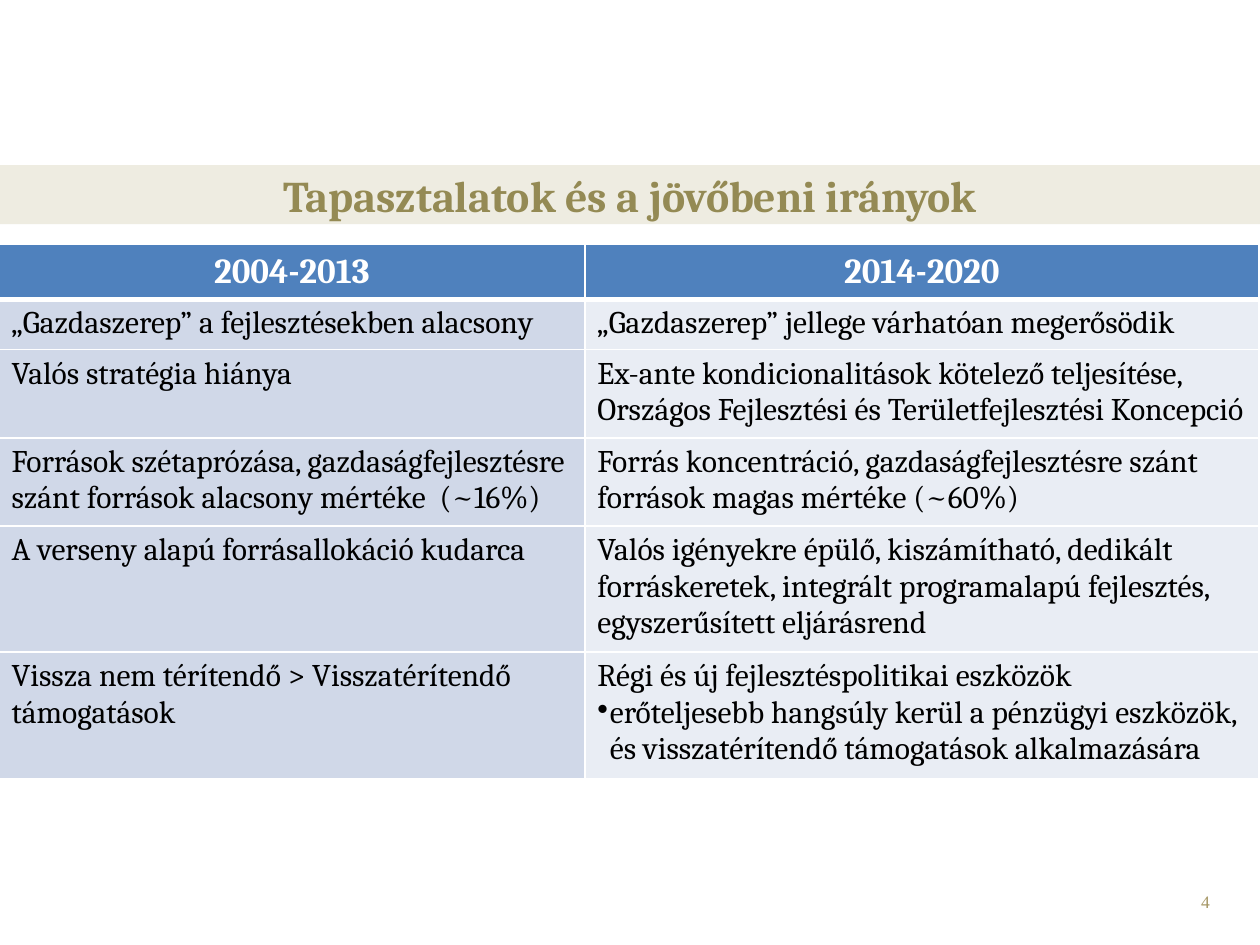
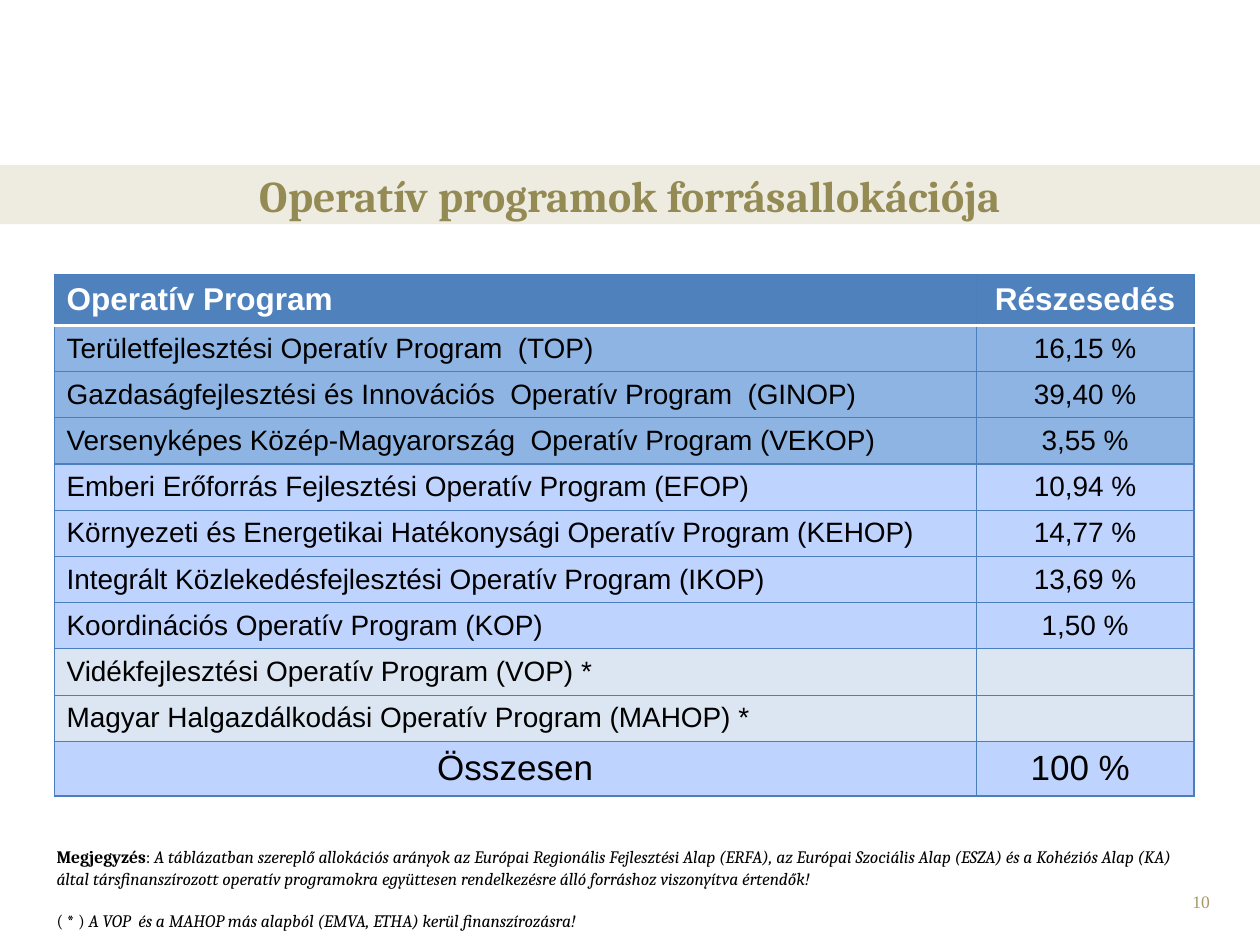
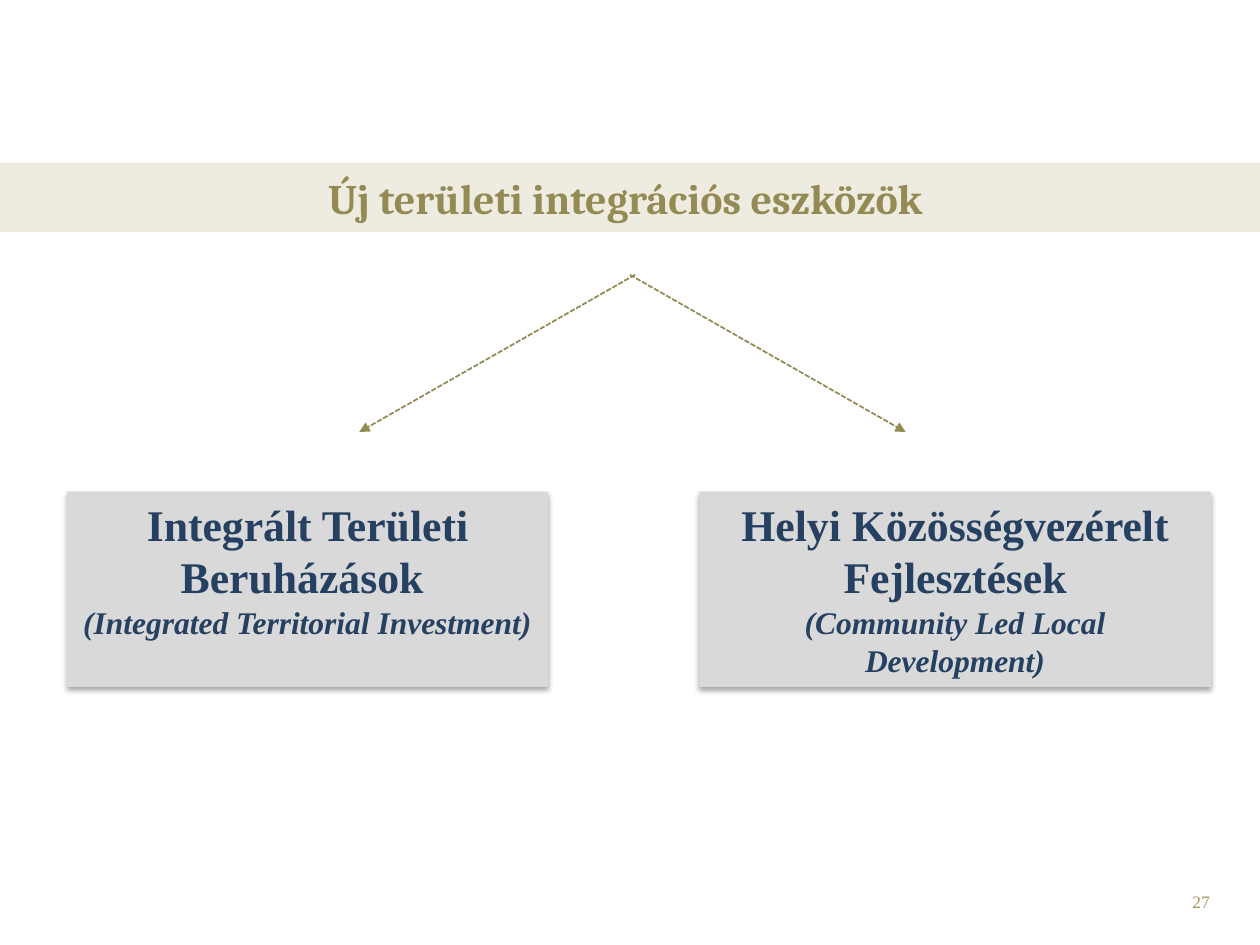
from dataclasses import dataclass

from lxml.etree import SubElement
from pptx import Presentation
from pptx.dml.color import RGBColor
from pptx.enum.dml import MSO_LINE
from pptx.enum.shapes import MSO_CONNECTOR, MSO_SHAPE
from pptx.enum.text import MSO_ANCHOR, PP_ALIGN
from pptx.oxml import parse_xml
from pptx.oxml.ns import nsdecls, qn
from pptx.util import Cm, Pt

COLORS = {
    "band": "EEECE1", "olive": "948A54", "number": "A69765", "white": "FFFFFF",
    "black": "000000", "header": "4F81BD", "past": "D0D8E8", "future": "E9EDF4",
    "grid": "4B7EBC", "economy": "8EB4E3", "sector": "BFD3FF", "rural": "DCE6F2",
    "card": "D9D9D9", "navy": "254061",
}
SERIF, TITLE_FONT, SANS = "Times New Roman", "Cambria", "Arial"
PAGE_WIDTH, PAGE_HEIGHT = 25.4, 19.05


@dataclass(frozen=True)
class Area:
    left: float
    top: float
    width: float
    height: float

    def lengths(self) -> tuple:
        return Cm(self.left), Cm(self.top), Cm(self.width), Cm(self.height)


@dataclass(frozen=True)
class TextStyle:
    font: str
    size: float
    color: str
    bold: bool = False
    italic: bool = False
    align: PP_ALIGN = PP_ALIGN.LEFT


@dataclass(frozen=True)
class Row:
    height: float
    texts: tuple
    fills: tuple
    styles: tuple


@dataclass(frozen=True)
class Grid:
    left: float
    top: float
    columns: tuple
    line_color: str
    line_width: float
    header_line: float
    anchor: MSO_ANCHOR


@dataclass(frozen=True)
class Card:
    area: Area
    name: str
    english: str


BAND = Area(0, 3.33, PAGE_WIDTH, 1.19)
TALL_BAND = Area(0, 3.28, PAGE_WIDTH, 1.4)
NUMBER_AREA = Area(18.72, 17.83, 5.92, 1.02)
NUMBER_STYLE = TextStyle(SERIF, 10, "number", align=PP_ALIGN.RIGHT)


def rgb(name: str) -> RGBColor:
    return RGBColor.from_string(COLORS[name])


# Text
def style_paragraph(para, style: TextStyle) -> None:
    para.alignment = style.align
    font = para.font
    font.name, font.size = style.font, Pt(style.size)
    font.bold, font.italic = style.bold, style.italic
    font.color.rgb = rgb(style.color)


def add_bullet(para) -> None:
    properties = para._p.get_or_add_pPr()
    indent = Cm(0.25)
    properties.set("marL", str(indent))
    properties.set("indent", str(-indent))
    SubElement(properties, qn("a:buChar")).set("char", "•")


def write_lines(frame, lines: list, styles: list) -> None:
    for index, (line, style) in enumerate(zip(lines, styles)):
        para = frame.add_paragraph() if index else frame.paragraphs[0]
        if line.startswith("•"):
            add_bullet(para)
            line = line[1:]
        if line:
            para.add_run().text = line
        style_paragraph(para, style)


# Parts that the slides share
def add_box(page, area: Area, fill: str):
    box = page.shapes.add_shape(MSO_SHAPE.RECTANGLE, *area.lengths())
    box.shadow.inherit = False
    box.fill.solid()
    box.fill.fore_color.rgb = rgb(fill)
    box.line.fill.background()
    box.text_frame.word_wrap = True
    return box


def add_textbox(page, area: Area):
    frame = page.shapes.add_textbox(*area.lengths()).text_frame
    frame.word_wrap = True
    return frame


def add_page(deck, title: str, number: int, band: Area = BAND, title_size: float = 25):
    page = deck.slides.add_slide(deck.slide_layouts[6])
    box = add_box(page, band, "band")
    box.text_frame.vertical_anchor = MSO_ANCHOR.MIDDLE
    style = TextStyle(TITLE_FONT, title_size, "olive", bold=True, align=PP_ALIGN.CENTER)
    write_lines(box.text_frame, [title], [style])
    write_lines(add_textbox(page, NUMBER_AREA), [str(number)], [NUMBER_STYLE])
    return page


# Tables
def set_borders(cell, edges: dict) -> None:
    properties = cell._tc.get_or_add_tcPr()
    for position, side in enumerate("LRTB"):
        color, width = edges[side]
        properties.insert(position, parse_xml(
            f'<a:ln{side} {nsdecls("a")} w="{Pt(width)}"><a:solidFill>'
            f'<a:srgbClr val="{COLORS[color]}"/></a:solidFill></a:ln{side}>'))


def add_grid(page, grid: Grid, rows: list) -> None:
    area = Area(grid.left, grid.top, sum(grid.columns), sum(row.height for row in rows))
    table = page.shapes.add_table(len(rows), len(grid.columns), *area.lengths()).table
    table.horz_banding = False
    for column, width in zip(table.columns, grid.columns):
        column.width = Cm(width)
    for row_index, row in enumerate(rows):
        table.rows[row_index].height = Cm(row.height)
        edges = dict.fromkeys("LRTB", (grid.line_color, grid.line_width))
        if row_index < 2:
            edges["B" if row_index == 0 else "T"] = ("white", grid.header_line)
        for column_index, text in enumerate(row.texts):
            cell = table.cell(row_index, column_index)
            cell.fill.solid()
            cell.fill.fore_color.rgb = rgb(row.fills[column_index])
            cell.vertical_anchor = MSO_ANCHOR.MIDDLE if row_index == 0 else grid.anchor
            lines = text.split("\n")
            write_lines(cell.text_frame, lines, [row.styles[column_index]] * len(lines))
            set_borders(cell, edges)


# Slide 1: experience and future directions
def build_directions(deck) -> None:
    page = add_page(deck, "Tapasztalatok és a jövőbeni irányok", 4)
    head = TextStyle(TITLE_FONT, 20, "white", bold=True, align=PP_ALIGN.CENTER)
    body = TextStyle(TITLE_FONT, 18, "black")
    comparisons = [
        (0.98, "„Gazdaszerep” a fejlesztésekben alacsony",
         "„Gazdaszerep” jellege várhatóan megerősödik"),
        (1.72, "Valós stratégia hiánya",
         "Ex-ante kondicionalitások kötelező teljesítése,\n"
         "Országos Fejlesztési és Területfejlesztési Koncepció"),
        (1.72, "Források szétaprózása, gazdaságfejlesztésre szánt források "
         "alacsony mértéke  (~16%)",
         "Forrás koncentráció, gazdaságfejlesztésre szánt források magas mértéke (~60%)"),
        (2.46, "A verseny alapú forrásallokáció kudarca",
         "Valós igényekre épülő, kiszámítható, dedikált forráskeretek, integrált "
         "programalapú fejlesztés, egyszerűsített eljárásrend"),
        (2.46, "Vissza nem térítendő > Visszatérítendő támogatások",
         "Régi és új fejlesztéspolitikai eszközök\n"
         "•erőteljesebb hangsúly kerül a pénzügyi eszközök, és visszatérítendő "
         "támogatások alkalmazására"),
    ]
    rows = [Row(1.04, ("2004-2013", "2014-2020"), ("header",) * 2, (head,) * 2)]
    rows += [Row(height, (past, future), ("past", "future"), (body,) * 2)
             for height, past, future in comparisons]
    grid = Grid(-0.02, 4.93, (11.81, 13.59), "white", 1, 3, MSO_ANCHOR.TOP)
    add_grid(page, grid, rows)


# Slide 2: shares of the operative programmes
def build_allocation(deck) -> None:
    page = add_page(deck, "Operatív programok forrásallokációja", 10)
    center = PP_ALIGN.CENTER
    head = (TextStyle(SANS, 18, "white", bold=True),
            TextStyle(SANS, 18, "white", bold=True, align=center))
    body = (TextStyle(SANS, 16, "black"), TextStyle(SANS, 16, "black", align=center))
    total = (TextStyle(SANS, 20, "black", align=center),) * 2
    programmes = [
        ("economy", "Területfejlesztési Operatív Program  (TOP)", "16,15 %"),
        ("economy", "Gazdaságfejlesztési és Innovációs  Operatív Program  (GINOP)", "39,40 %"),
        ("economy", "Versenyképes Közép-Magyarország  Operatív Program (VEKOP)", "3,55 %"),
        ("sector", "Emberi Erőforrás Fejlesztési Operatív Program (EFOP)", "10,94 %"),
        ("sector", "Környezeti és Energetikai Hatékonysági Operatív Program (KEHOP)",
         "14,77 %"),
        ("sector", "Integrált Közlekedésfejlesztési Operatív Program (IKOP)", "13,69 %"),
        ("sector", "Koordinációs Operatív Program (KOP)", "1,50 %"),
        ("rural", "Vidékfejlesztési Operatív Program (VOP) *", ""),
        ("rural", "Magyar Halgazdálkodási Operatív Program (MAHOP) *", ""),
    ]
    rows = [Row(0.97, ("Operatív Program", "Részesedés"), ("header",) * 2, head)]
    rows += [Row(0.91 if group == "rural" else 0.88, (name, share), (group,) * 2, body)
             for group, name, share in programmes]
    rows.append(Row(1.03, ("Összesen", "100 % "), ("sector",) * 2, total))
    grid = Grid(1.09, 5.54, (18.59, 4.39), "grid", 0.75, 2, MSO_ANCHOR.MIDDLE)
    add_grid(page, grid, rows)
    add_note(page)


def add_note(page) -> None:
    frame = add_textbox(page, Area(0.89, 16.94, 23.6, 2.1))
    notes = [
        [("Megjegyzés", True, False), (": ", False, False),
         ("A táblázatban szereplő allokációs arányok az Európai Regionális Fejlesztési "
          "Alap (ERFA), az Európai Szociális Alap (ESZA) és a Kohéziós Alap (KA) által "
          "társfinanszírozott operatív programokra együttesen rendelkezésre álló "
          "forráshoz viszonyítva értendők!", False, True)],
        [("( * ) ", False, False),
         ("A VOP  és a MAHOP más alapból (EMVA, ETHA) kerül finanszírozásra!",
          False, True)],
    ]
    for index, parts in enumerate(notes):
        para = frame.add_paragraph() if index else frame.paragraphs[0]
        if index:
            para.space_before = Pt(12)
        style_paragraph(para, TextStyle(TITLE_FONT, 10, "black"))
        for text, bold, italic in parts:
            span = para.add_run()
            span.text, span.font.bold, span.font.italic = text, bold, italic


# Slide 3: new territorial tools
def add_shadow(box) -> None:
    effects = box._element.spPr.find(qn("a:effectLst"))
    effects.append(parse_xml(
        f'<a:outerShdw {nsdecls("a")} blurRad="{Pt(3.1)}" dist="{Pt(1.8)}" dir="5400000" '
        f'rotWithShape="0"><a:srgbClr val="{COLORS["black"]}"><a:alpha val="35000"/>'
        '</a:srgbClr></a:outerShdw>'))


def add_card(page, card: Card) -> None:
    box = add_box(page, card.area, "card")
    add_shadow(box)
    box.text_frame.vertical_anchor = MSO_ANCHOR.TOP
    name = TextStyle(SERIF, 25, "navy", bold=True, align=PP_ALIGN.CENTER)
    english = TextStyle(SERIF, 18, "navy", True, True, PP_ALIGN.CENTER)
    write_lines(box.text_frame, [card.name, card.english], [name, english])


def add_arrow(page, start: tuple, end: tuple) -> None:
    arrow = page.shapes.add_connector(
        MSO_CONNECTOR.STRAIGHT, *(Cm(value) for value in start + end))
    arrow.line.color.rgb = rgb("olive")
    arrow.line.width = Pt(1)
    arrow.line.dash_style = MSO_LINE.SQUARE_DOT
    SubElement(arrow.line._get_or_add_ln(), qn("a:tailEnd")).set("type", "triangle")
    SubElement(arrow._element.spPr, qn("a:effectLst"))


def build_tools(deck) -> None:
    page = add_page(deck, "Új területi integrációs eszközök ", 27, TALL_BAND, 24)
    cards = [
        Card(Area(1.35, 9.91, 9.7, 3.94), "Integrált Területi Beruházások ",
             "(Integrated Territorial Investment)"),
        Card(Area(14.1, 9.91, 10.31, 3.94), "Helyi Közösségvezérelt Fejlesztések",
             "(Community Led Local Development)"),
    ]
    for card in cards:
        add_card(page, card)
    for start, reach in ((12.7, 5.56), (12.8, -5.56)):
        add_arrow(page, (start, 5.54), (start + reach, 8.71))


def main() -> None:
    deck = Presentation()
    deck.slide_width, deck.slide_height = Cm(PAGE_WIDTH), Cm(PAGE_HEIGHT)
    build_directions(deck)
    build_allocation(deck)
    build_tools(deck)
    deck.save("out.pptx")


if __name__ == "__main__":
    main()
